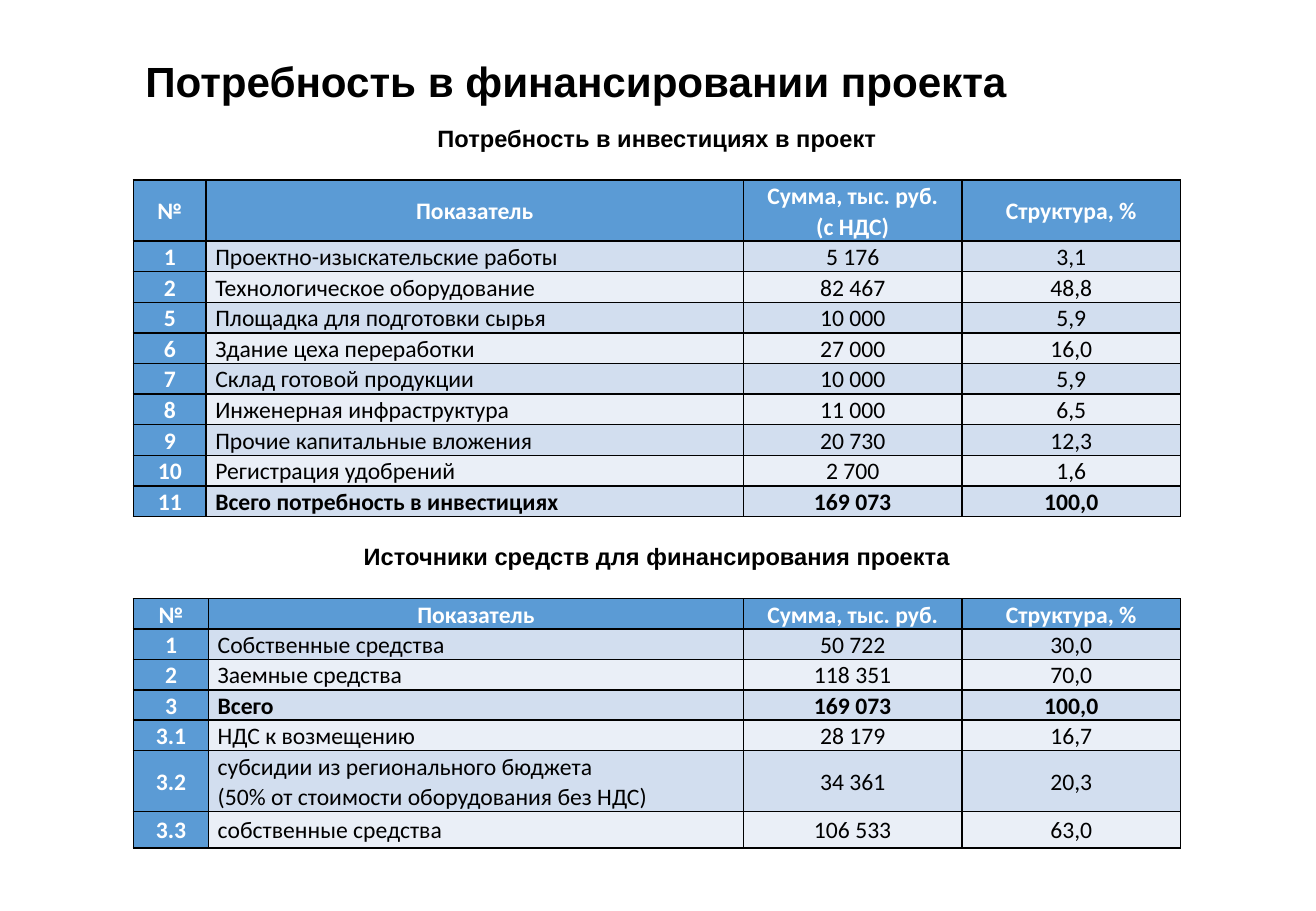
from pptx import Presentation
from pptx.dml.color import RGBColor
from pptx.enum import text as tx
from pptx.oxml import parse_xml
from pptx.oxml.ns import nsdecls
from pptx.util import Cm, Pt

LEFT, WIDTH = 2.79, 21.89
BLACK, WHITE, BLUE = "000000", "FFFFFF", "5B9BD5"
BANDS = ["D2DEEF", "EAEFF7"]
CENTER, START = tx.PP_ALIGN.CENTER, tx.PP_ALIGN.LEFT
MIDDLE = tx.MSO_ANCHOR.MIDDLE

NEEDS = [
    ("№", "Показатель", "Сумма, тыс. руб.\n(с НДС)", "Структура, %"),
    ("1", "Проектно-изыскательские работы", "5 176", "3,1"),
    ("2", "Технологическое оборудование", "82 467", "48,8"),
    ("5", "Площадка для подготовки сырья", "10 000", "5,9"),
    ("6", "Здание цеха переработки", "27 000", "16,0"),
    ("7", "Склад готовой продукции", "10 000", "5,9"),
    ("8", "Инженерная инфраструктура", "11 000", "6,5"),
    ("9", "Прочие капитальные вложения", "20 730", "12,3"),
    ("10", "Регистрация удобрений", "2 700", "1,6"),
    ("11", "Всего потребность в инвестициях", "169 073", "100,0"),
]
FUNDS = [
    ("№", "Показатель", "Сумма, тыс. руб.", "Структура, %"),
    ("1", "Собственные средства", "50 722", "30,0"),
    ("2", "Заемные средства", "118 351", "70,0"),
    ("3", "Всего", "169 073", "100,0"),
    ("3.1", "НДС к возмещению", "28 179", "16,7"),
    ("3.2", "субсидии из регионального бюджета\n"
            "(50% от стоимости оборудования без НДС)", "34 361", "20,3"),
    ("3.3", "собственные средства", "106 533", "63,0"),
]


def color(value):
    return RGBColor.from_string(value)


def assign(item, values):
    for name, value in values.items():
        setattr(item, name, value)


def style(frame, font, size, tint, bold, align, spacing):
    for para in frame.paragraphs:
        assign(para, {"alignment": align, "line_spacing": spacing})
        assign(para.font, {"name": font, "size": Pt(size), "bold": bold})
        para.font.color.rgb = color(tint)


def heading(slide, words, box, size=14, align=CENTER, spacing=1.0):
    frame = slide.shapes.add_textbox(*map(Cm, box)).text_frame
    assign(frame, {"word_wrap": True, "vertical_anchor": MIDDLE, "text": words})
    style(frame, "Arial", size, BLACK, True, align, spacing)


def border(cell):
    props = cell._tc.get_or_add_tcPr()
    for side in "LRTB":
        props.append(parse_xml(
            f'<a:ln{side} {nsdecls("a")} w="12700"><a:solidFill>'
            f'<a:srgbClr val="{BLACK}"/></a:solidFill></a:ln{side}>'))


def grid(slide, rows, box, first, heights):
    size = len(rows), len(rows[0])
    table = slide.shapes.add_table(*size, *map(Cm, box)).table
    sums = 4.57
    for col, width in zip(table.columns, (first, box[2] - first - 2 * sums, sums, sums)):
        col.width = Cm(width)
    for i, (row, height) in enumerate(zip(rows, heights)):
        table.rows[i].height = Cm(height)
        total = row[1].startswith("Всего")
        for j, words in enumerate(row):
            cell = table.cell(i, j)
            head = i == 0 or j == 0
            assign(cell, {"text": words, "vertical_anchor": MIDDLE,
                          "margin_left": Cm(0.19), "margin_right": Cm(0.19),
                          "margin_top": 0, "margin_bottom": 0})
            style(cell.text_frame, "Calibri", 14, WHITE if head else BLACK,
                  head or total, START if j == 1 and i else CENTER, 1.07)
            border(cell)
            cell.fill.solid()
            cell.fill.fore_color.rgb = color(BLUE if head else BANDS[(i - 1) % 2])


def finance(deck):
    slide = deck.slides.add_slide(deck.slide_layouts[6])
    # Title
    heading(slide, "Потребность в финансировании проекта",
            (LEFT, 0.81, WIDTH, 1.9), 25, START, 0.9)
    # Investment needs
    heading(slide, "Потребность в инвестициях в проект", (LEFT, 2.46, WIDTH, 0.86))
    grid(slide, NEEDS, (LEFT, 3.76, WIDTH, 7.04), 1.52, [1.28] + [0.64] * 9)
    # Sources of funds
    heading(slide, "Источники средств для финансирования проекта",
            (LEFT, 11.2, WIDTH, 0.86))
    grid(slide, FUNDS, (LEFT, 12.52, WIDTH, 5.11), 1.57, [0.62] * 5 + [1.24, 0.77])


def main():
    deck = Presentation()
    assign(deck, {"slide_width": Cm(27.51), "slide_height": Cm(19.05)})
    finance(deck)
    deck.save("out.pptx")


if __name__ == "__main__":
    main()
